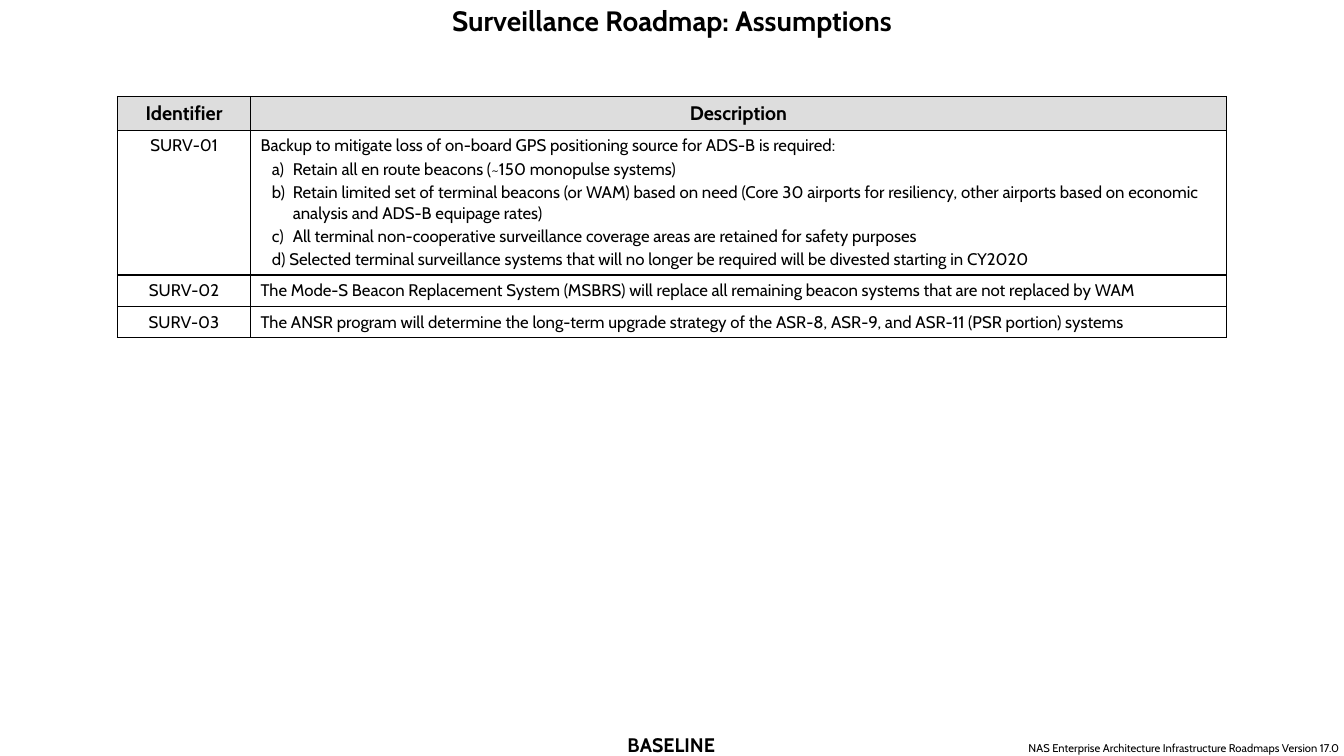
from dataclasses import dataclass

import pptx
import pptx.dml.color
import pptx.enum.text
import pptx.oxml
import pptx.oxml.ns
import pptx.util

Pt = pptx.util.Pt
ALIGN = pptx.enum.text.PP_ALIGN
ANCHOR = pptx.enum.text.MSO_ANCHOR


@dataclass(frozen=True)
class Theme:
    font: str = "Cabin"
    ink: str = "000000"
    paper: str = "FFFFFF"
    header_fill: str = "DDDDDD"
    title_size: float = 20
    heading_size: float = 14
    body_size: float = 12
    note_size: float = 8


THEME = Theme()
PAGE_WIDTH, PAGE_HEIGHT = 960, 540

COLUMN_WIDTHS = (95, 697)
ROW_HEIGHTS = (24.25, 101.5, 22.75, 21.5)
ROWS = (
    ("Identifier", ("Description",)),
    ("SURV-01", (
        "Backup to mitigate loss of on-board GPS positioning source for ADS-B is required:",
        "a)\tRetain all en route beacons (~150 monopulse systems)",
        "b)\tRetain limited set of terminal beacons (or WAM) based on need (Core 30 airports "
        "for resiliency, other airports based on economic analysis and ADS-B equipage rates)",
        "c)\tAll terminal non-cooperative surveillance coverage areas are retained for safety purposes",
        "d) Selected terminal surveillance systems that will no longer be required "
        "will be divested starting in CY2020",
    )),
    ("SURV-02", (
        "The Mode-S Beacon Replacement System (MSBRS) will replace all remaining beacon systems "
        "that are not replaced by WAM",
    )),
    ("SURV-03", (
        "The ANSR program will determine the long-term upgrade strategy of the ASR-8, ASR-9, "
        "and ASR-11 (PSR portion) systems",
    )),
)


def color(code):
    return pptx.dml.color.RGBColor.from_string(code)


def write(para, text, size, align, bold=False):
    para.alignment = align
    span = para.add_run()
    span.text = text
    span.font.name = THEME.font
    span.font.size = Pt(size)
    span.font.bold = bold
    span.font.color.rgb = color(THEME.ink)


def indent_item(para):
    """Hang a lettered item so wrapped lines align with its text."""
    properties = para._p.get_or_add_pPr()
    properties.set("marL", str(Pt(23)))
    properties.set("indent", str(Pt(-15)))


def style_cell(cell, fill):
    """Outline the cell on all sides, then fill it."""
    properties = cell._tc.get_or_add_tcPr()
    for side in ("lnL", "lnR", "lnT", "lnB"):
        properties.append(pptx.oxml.parse_xml(
            f'<a:{side} {pptx.oxml.ns.nsdecls("a")} w="{Pt(1)}"><a:solidFill>'
            f'<a:srgbClr val="{THEME.ink}"/></a:solidFill></a:{side}>'))
    cell.fill.solid()
    cell.fill.fore_color.rgb = color(fill)
    cell.margin_left = cell.margin_right = Pt(7.2)
    cell.margin_top = cell.margin_bottom = Pt(3.6)


def add_title(page, left, top, width, height):
    title = page.shapes.title
    title.left, title.top, title.width, title.height = map(Pt, (left, top, width, height))
    title.text_frame.vertical_anchor = ANCHOR.MIDDLE
    write(title.text_frame.paragraphs[0], "Surveillance Roadmap: Assumptions",
          THEME.title_size, ALIGN.CENTER, bold=True)


def add_assumptions(page, left, top):
    table = page.shapes.add_table(
        len(ROWS), len(COLUMN_WIDTHS), Pt(left), Pt(top),
        Pt(sum(COLUMN_WIDTHS)), Pt(sum(ROW_HEIGHTS))).table
    table.horz_banding = False
    table.first_row = False
    for column, width in zip(table.columns, COLUMN_WIDTHS):
        column.width = Pt(width)
    for index, (identifier, description) in enumerate(ROWS):
        header = index == 0
        table.rows[index].height = Pt(ROW_HEIGHTS[index])
        size = THEME.heading_size if header else THEME.body_size
        for column, lines in enumerate(((identifier,), description)):
            cell = table.cell(index, column)
            style_cell(cell, THEME.header_fill if header else THEME.paper)
            align = ALIGN.CENTER if header or column == 0 else ALIGN.LEFT
            for number, line in enumerate(lines):
                frame = cell.text_frame
                para = frame.add_paragraph() if number else frame.paragraphs[0]
                para.space_before = Pt(2)
                if number:
                    indent_item(para)
                write(para, line, size, align, bold=header)


def add_label(page, left, top, width, height, text, size, align, bold=False):
    frame = page.shapes.add_textbox(*map(Pt, (left, top, width, height))).text_frame
    frame.word_wrap = True
    frame.vertical_anchor = ANCHOR.MIDDLE
    frame.margin_left = frame.margin_right = Pt(1.44 if align == ALIGN.RIGHT else 0)
    frame.margin_top = frame.margin_bottom = 0
    write(frame.paragraphs[0], text, size, align, bold)


def add_footer(page, left, top, width, height):
    add_label(page, left + width / 2 - 74.5, top, 148, height, "BASELINE",
              THEME.heading_size, ALIGN.CENTER, bold=True)
    add_label(page, left + width - 355, top + 6, 353.5, 9.5,
              "NAS Enterprise Architecture Infrastructure Roadmaps Version 17.0",
              THEME.note_size, ALIGN.RIGHT)


def main():
    deck = pptx.Presentation()
    deck.slide_width, deck.slide_height = Pt(PAGE_WIDTH), Pt(PAGE_HEIGHT)
    page = deck.slides.add_slide(deck.slide_layouts[5])
    page.background.fill.solid()
    page.background.fill.fore_color.rgb = color(THEME.paper)
    add_title(page, 0, 0, PAGE_WIDTH, 29)
    add_assumptions(page, 84, 69)
    add_footer(page, 0, 523.5, PAGE_WIDTH, 17)
    deck.save("out.pptx")


if __name__ == "__main__":
    main()
